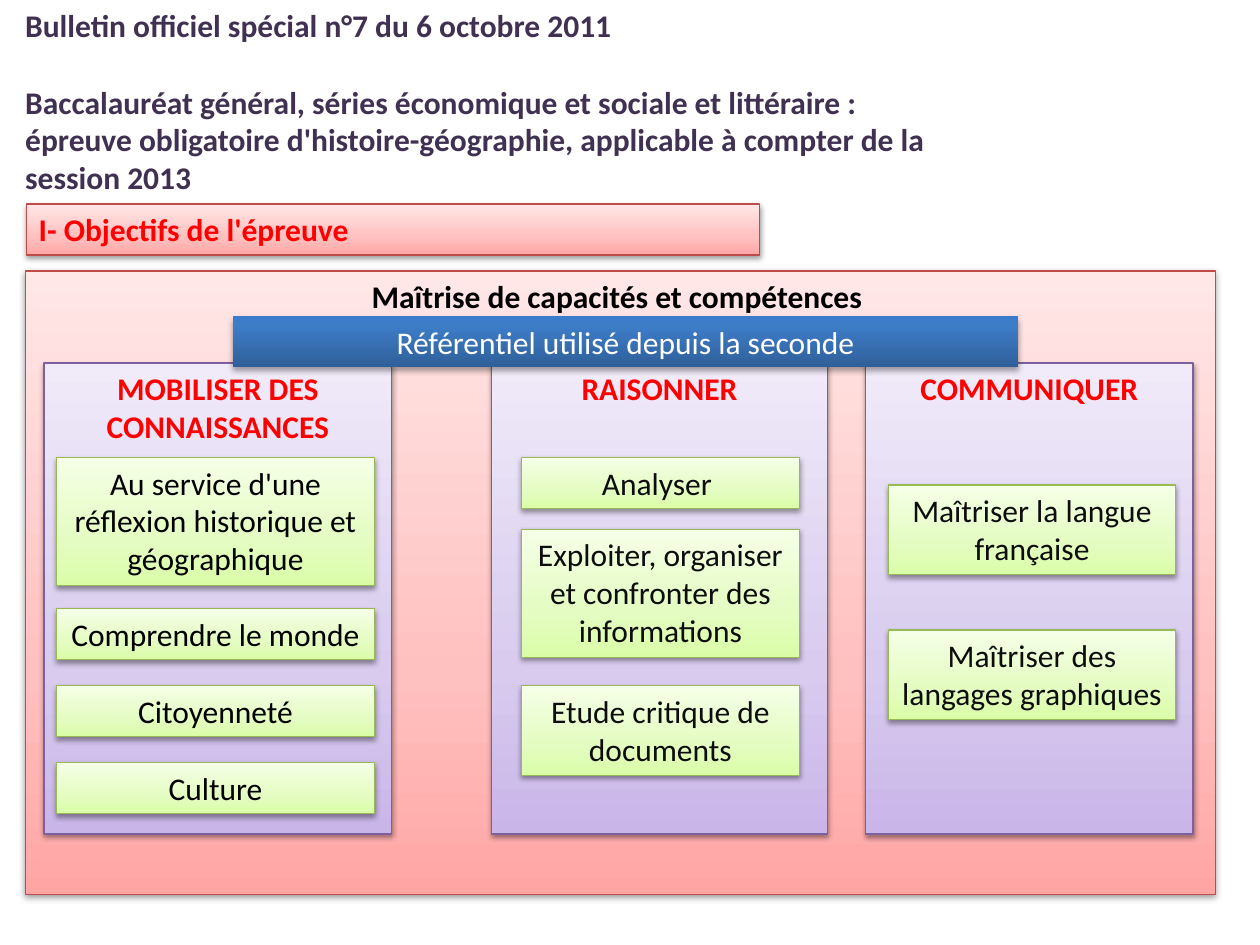
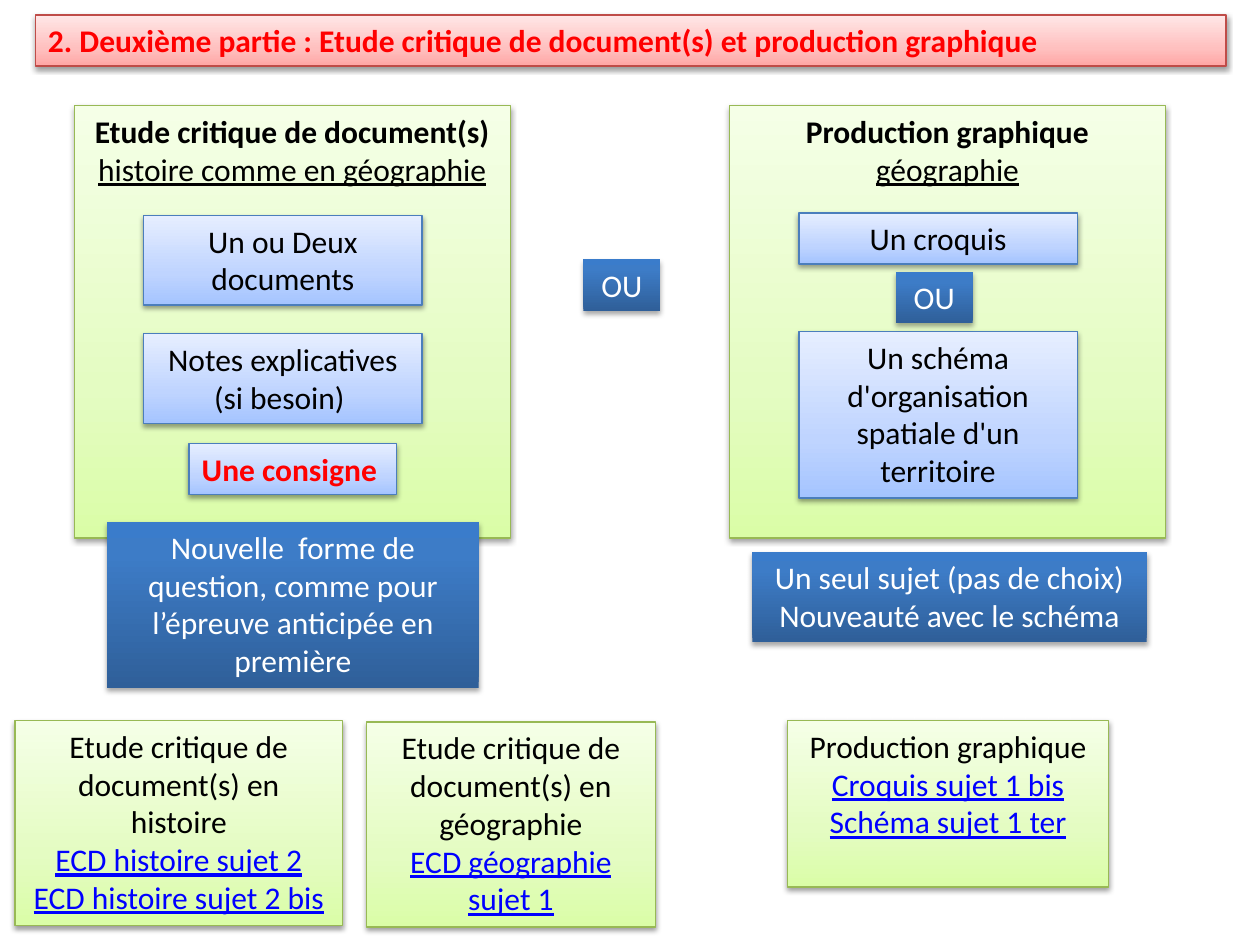
from collections import namedtuple

from lxml.etree import SubElement
from pptx import Presentation
from pptx.dml.color import RGBColor
from pptx.enum.shapes import MSO_SHAPE
from pptx.enum.text import MSO_ANCHOR, MSO_AUTO_SIZE, PP_ALIGN
from pptx.oxml.ns import qn
from pptx.util import Pt

FONT = "Calibri"
LINE_HEIGHT = 22
PADDING = 3.6
TITLE_ONLY = 5

COLOURS = {
    "black": "000000", "soft black": "0D0D0D", "white": "FFFFFF",
    "red": "FF0000", "plum": "403152", "link": "0000FF",
    "red line": "BF4C48", "violet line": "7D60A0",
    "green line": "98B955", "blue line": "4B7EBC",
}

# Gradient stops run from the bottom edge to the top edge
GRADIENTS = {
    "red": ((0, "FFA6A5"), (35, "FFC0BF"), (100, "FFE7E7")),
    "violet": ((0, "C9B5E8"), (35, "D8CBEE"), (100, "F0EAF9")),
    "green": ((0, "DAFDA7"), (35, "E4FCC2"), (100, "F5FFE7")),
    "blue": ((0, "A4C4FF"), (35, "BFD4FF"), (100, "E6EEFF")),
    "deep blue": ((0, "2F5F99"), (80, "3D7CC7"), (100, "3A7CCB")),
}


class Box(namedtuple("Box", "left top width height")):
    """A rectangle in points."""

    def inside(self, left, top, width, height):
        return Box(self.left + left, self.top + top, width, height)


Words = namedtuple("Words", "text colour bold underline",
                   defaults=("black", False, False))


def height_of(lines):
    return lines * LINE_HEIGHT + 2 * PADDING


# Shared formatting

def place(shape, box):
    shape.left, shape.top, shape.width, shape.height = map(Pt, box)


def paint(shape, theme):
    """Give a shape its gradient, outline and soft shadow."""
    shape.fill.gradient()
    shape.fill.gradient_angle = 90
    properties = shape._element.spPr
    stops = properties.find(qn("a:gradFill")).find(qn("a:gsLst"))
    for stop in list(stops):
        stops.remove(stop)
    for position, colour in GRADIENTS[theme]:
        stop = SubElement(stops, qn("a:gs"), pos=str(position * 1000))
        SubElement(stop, qn("a:srgbClr"), val=colour)

    deep = theme == "deep blue"
    if deep:
        shape.line.fill.background()
    else:
        shape.line.color.rgb = RGBColor.from_string(COLOURS[theme + " line"])
        shape.line.width = Pt(0.75)

    shape.shadow.inherit = False
    shadow = SubElement(
        properties.find(qn("a:effectLst")), qn("a:outerShdw"),
        blurRad=str(Pt(3.1)), dist=str(Pt(1.8 if deep else 1.6)),
        dir="5400000", rotWithShape="0")
    colour = SubElement(shadow, qn("a:srgbClr"), val=COLOURS["black"])
    SubElement(colour, qn("a:alpha"), val="35000" if deep else "38000")


def write(shape, paragraphs, align=PP_ALIGN.CENTER, gap=0):
    """Write paragraphs, each a list of Words, from the top of the shape."""
    frame = shape.text_frame
    frame.word_wrap = True
    frame.auto_size = MSO_AUTO_SIZE.NONE
    frame.vertical_anchor = MSO_ANCHOR.TOP
    frame.margin_left = frame.margin_right = Pt(2 * PADDING)
    frame.margin_top = frame.margin_bottom = Pt(PADDING)
    for index, words_list in enumerate(paragraphs):
        paragraph = frame.add_paragraph() if index else frame.paragraphs[0]
        paragraph.alignment = align
        paragraph.space_before = Pt(gap if index else 0)
        for words in words_list:
            run = paragraph.add_run()
            run.text = words.text
            run.font.name = FONT
            run.font.size = Pt(18)
            run.font.bold = words.bold
            run.font.underline = words.underline
            run.font.color.rgb = RGBColor.from_string(COLOURS[words.colour])


def add_block(slide, box, theme, *paragraphs, align=PP_ALIGN.CENTER):
    shape = slide.shapes.add_shape(MSO_SHAPE.RECTANGLE, *map(Pt, box))
    paint(shape, theme)
    write(shape, paragraphs, align)


def add_note(slide, box, *texts):
    add_block(slide, box, "deep blue", *[[Words(text, "white")] for text in texts])


def add_title(slide, box, *paragraphs, theme=None, gap=0):
    title = slide.shapes.title
    place(title, box)
    if theme:
        paint(title, theme)
    write(title, paragraphs, PP_ALIGN.LEFT, gap)


# Slide 1: aims of the exam

def add_skill_column(slide, box, heading, inset, item_width, items, colour):
    """Violet column; items are (top, line count, text)."""
    add_block(slide, box, "violet", [Words(heading, "red", True)])
    for top, lines, text in items:
        add_block(slide, box.inside(inset, top, item_width, height_of(lines)),
                  "green", [Words(text, colour)])


def add_skills_panel(slide, box):
    add_block(slide, box, "red",
              [Words("Maîtrise de capacités et compétences ", bold=True)])
    columns = [
        (10.8, 198.7, "MOBILISER DES CONNAISSANCES", 7.2, 181.5, "black", [
            (54, 3, "Au service d'une réflexion historique et géographique"),
            (140.4, 1, "Comprendre le monde "),
            (184.4, 1, "Citoyenneté"),
            (228.4, 1, "Culture")]),
        (266.4, 192.2, "RAISONNER", 17.3, 158.6, "soft black", [
            (54, 1, "Analyser "),
            (95, 3, "Exploiter, organiser et confronter des informations"),
            (184.4, 2, "Etude critique de documents")]),
        (480.2, 187.2, "COMMUNIQUER", 13, 164.2, "soft black", [
            (69.8, 2, "Maîtriser la langue française"),
            (152.6, 2, "Maîtriser des langages graphiques")]),
    ]
    for left, width, heading, inset, item_width, colour, items in columns:
        add_skill_column(slide, box.inside(left, 52.6, width, 269.3),
                         heading, inset, item_width, items, colour)
    add_note(slide, box.inside(118.8, 26, 448.6, height_of(1)),
             "Référentiel utilisé depuis la seconde")


def build_aims_slide(slide):
    add_title(
        slide, Box(7.2, 0, 538.6, 116.6),
        [Words("Bulletin officiel spécial n°7 du 6 octobre 2011", "plum", True)],
        [Words("Baccalauréat général, séries économique et sociale et littéraire : "
               "épreuve obligatoire d'histoire-géographie, applicable à compter "
               "de la session 2013", "plum", True)],
        gap=LINE_HEIGHT)
    add_block(slide, Box(15, 116.6, 419, height_of(1)), "red",
              [Words("I- Objectifs de l'épreuve", "red", True)],
              align=PP_ALIGN.LEFT)
    add_skills_panel(slide, Box(14.4, 154.8, 680.4, 356.4))


# Slide 2: second part of the exam

def add_option_steps(slide, box, steps):
    """Blue steps inside a green option; steps are (top, line count, text)."""
    for top, lines, text in steps:
        add_block(slide, box.inside(39.6, top, 159.1, height_of(lines)),
                  "blue", [Words(text)])


def add_document_option(slide, box):
    add_block(slide, box, "green", [
        Words("Etude critique de document(s)", bold=True),
        Words(" histoire comme en géographie", underline=True)])
    add_option_steps(slide, box, [
        (62.6, 2, "Un ou Deux documents"),
        (130.3, 2, "Notes explicatives (si besoin) ")])
    add_block(slide, box.inside(65.5, 193, 118.8, height_of(1)), "blue",
              [Words("Une consigne ", "red", True)])
    add_note(slide, box.inside(18.7, 237.6, 212.4, height_of(4)),
             "Nouvelle  forme de question, comme pour l’épreuve anticipée "
             "en première")


def add_graphic_option(slide, box):
    add_block(slide, box, "green",
              [Words("Production graphique", bold=True)],
              [Words("géographie", underline=True)])
    add_option_steps(slide, box, [
        (61.2, 1, "Un croquis"),
        (129, 4, "Un schéma d'organisation spatiale d'un territoire")])
    add_or(slide, box.inside(95, 95, 44, height_of(1)))
    add_note(slide, box.inside(13, 255, 225.4, height_of(2)),
             "Un seul sujet (pas de choix)", "Nouveauté avec le schéma")


def add_or(slide, box):
    add_note(slide, box, "OU")


def add_subject_card(slide, box, heading, subjects):
    add_block(slide, box, "green", [Words(heading)],
              *[[Words(subject, "link", underline=True)] for subject in subjects])


def build_second_part_slide(slide):
    add_title(slide, Box(20.2, 8.6, 680.4, height_of(1)),
              [Words("2. Deuxième partie : Etude critique de document(s) et "
                     "production graphique", "red", True)],
              theme="red")

    # Two options to choose from
    add_document_option(slide, Box(42.5, 60.5, 249.1, 247))
    add_graphic_option(slide, Box(416.9, 60.5, 249.1, 247))
    add_or(slide, Box(333.4, 148.3, 44, height_of(1)))

    # Sample subjects
    cards = [
        (8.6, 411.8, 187.2, 5, "Etude critique de document(s) en histoire",
         ["ECD histoire sujet 2", "ECD histoire sujet 2 bis"]),
        (209.5, 412.6, 164.9, 5, "Etude critique de document(s) en géographie",
         ["ECD géographie sujet 1"]),
        (450, 411.8, 183.6, 4, "Production graphique",
         ["Croquis sujet 1 bis", "Schéma sujet 1 ter"]),
    ]
    for left, top, width, lines, heading, subjects in cards:
        add_subject_card(slide, Box(left, top, width, height_of(lines)),
                         heading, subjects)


def main():
    presentation = Presentation()
    presentation.slide_width, presentation.slide_height = Pt(720), Pt(540)
    layout = presentation.slide_layouts[TITLE_ONLY]
    for build in (build_aims_slide, build_second_part_slide):
        build(presentation.slides.add_slide(layout))
    presentation.save("out.pptx")


if __name__ == "__main__":
    main()
